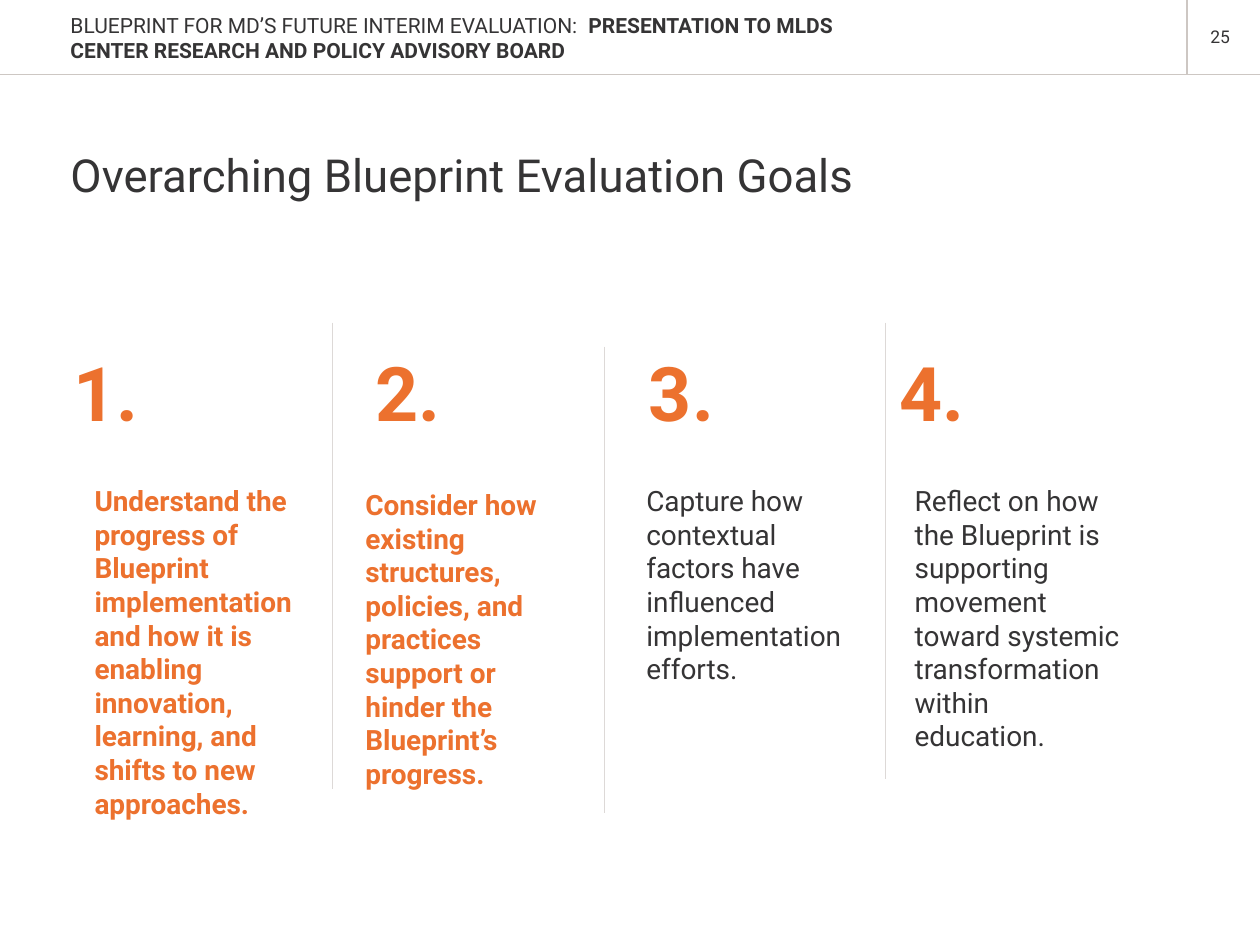
"""Build the slide on the overarching Blueprint evaluation goals."""
import dataclasses

import lxml.etree
import pptx
import pptx.dml.color
import pptx.enum.shapes
import pptx.enum.text
import pptx.oxml.ns
import pptx.util

Inches = pptx.util.Inches
DARK, ORANGE = "353435", "EC712E"
HEADER_RULE, GOAL_RULE = "CDC7C3", "DDD9D7"
HEADER_HEIGHT, PAGE_RULE_LEFT = 0.59, 9.42


@dataclasses.dataclass(frozen=True)
class Goal:
    """One numbered goal with the places of its number and wording."""
    number_left: float
    left: float
    width: float
    wording: str
    highlighted: bool = False
    top: float = 3.74


@dataclasses.dataclass(frozen=True)
class Rule:
    """A straight line between two points."""
    start: tuple[float, float]
    end: tuple[float, float]
    color: str


GOALS = [
    Goal(0.58, 0.75, 1.75,
         "Understand the progress of Blueprint implementation and how it is "
         "enabling innovation, learning, and shifts to new approaches.", True),
    Goal(2.98, 2.9, 1.72,
         "Consider how existing structures, policies, and practices support "
         "or hinder the Blueprint’s progress.", True, 3.77),
    Goal(5.15, 5.13, 1.68,
         "Capture how contextual factors have influenced implementation "
         "efforts."),
    Goal(7.14, 7.26, 1.74,
         "Reflect on how the Blueprint is supporting movement toward systemic "
         "transformation within education."),
]

RULES = [
    Rule((0, HEADER_HEIGHT), (10, HEADER_HEIGHT), HEADER_RULE),
    Rule((PAGE_RULE_LEFT, 0), (PAGE_RULE_LEFT, HEADER_HEIGHT), HEADER_RULE),
    Rule((2.64, 2.56), (2.64, 6.26), GOAL_RULE),
    Rule((4.8, 2.75), (4.8, 6.45), GOAL_RULE),
    Rule((7.03, 2.56), (7.03, 6.18), GOAL_RULE),
]


def rgb(value: str) -> pptx.dml.color.RGBColor:
    """Turn a hex string into a colour."""
    return pptx.dml.color.RGBColor.from_string(value)


def style_run(run, size: float, color: str, bold: bool) -> None:
    """Give a run its font."""
    run.font.name = "Roboto"
    run.font.size = pptx.util.Pt(size)
    run.font.bold = bold
    run.font.color.rgb = rgb(color)


def add_text(slide, box: tuple, wording: str, size: float, color: str = DARK,
             bold: bool = False, insets: tuple = (0, 0, 0, 0)):
    """Add a wrapped text box and return its text frame."""
    frame = slide.shapes.add_textbox(*map(Inches, box)).text_frame
    frame.word_wrap = True
    (frame.margin_left, frame.margin_top,
     frame.margin_right, frame.margin_bottom) = map(Inches, insets)
    frame.text = wording
    paragraph = frame.paragraphs[0]
    paragraph.line_spacing = pptx.util.Pt(round(size * 1.2, 1))
    style_run(paragraph.runs[0], size, color, bold)
    return frame


def add_rule(slide, rule: Rule) -> None:
    """Draw a thin line without a shadow."""
    line = slide.shapes.add_connector(
        pptx.enum.shapes.MSO_CONNECTOR.STRAIGHT,
        *map(Inches, rule.start + rule.end))
    line.line.color.rgb = rgb(rule.color)
    line.line.width = pptx.util.Pt(0.75)
    lxml.etree.SubElement(line._element.spPr,
                          pptx.oxml.ns.qn("a:effectLst"))


def add_header(slide) -> None:
    """Add the running title and the page number."""
    header = add_text(slide, (0.56, 0, 6.7, 0.6),
                      "BLUEPRINT FOR MD’S FUTURE INTERIM EVALUATION:  ", 12)
    header.vertical_anchor = pptx.enum.text.MSO_ANCHOR.MIDDLE
    audience = header.paragraphs[0].add_run()
    audience.text = ("PRESENTATION TO MLDS CENTER RESEARCH AND POLICY "
                     "ADVISORY BOARD")
    style_run(audience, 12, DARK, True)
    page = add_text(slide, (9.48, 0.16, 0.38, 0.27), "25", 10,
                    insets=(0.1, 0.05, 0.1, 0.05))
    page.paragraphs[0].alignment = pptx.enum.text.PP_ALIGN.RIGHT


def add_goal(slide, number: int, goal: Goal) -> None:
    """Add a goal's large number and its wording."""
    add_text(slide, (goal.number_left, 2.75, 1.42, 0.83), f"{number}.", 43,
             ORANGE, True)
    add_text(slide, (goal.left, goal.top, goal.width, 2.43), goal.wording, 16,
             ORANGE if goal.highlighted else DARK, goal.highlighted,
             (0, 0.1, 0.1, 0.1))


def main() -> None:
    """Build and save the slide."""
    deck = pptx.Presentation()
    deck.slide_width, deck.slide_height = Inches(10), Inches(7.5)
    slide = deck.slides.add_slide(deck.slide_layouts[6])
    add_header(slide)
    add_text(slide, (0.56, 1.17, 8, 1),
             "Overarching Blueprint Evaluation Goals", 26)
    for number, goal in enumerate(GOALS, 1):
        add_goal(slide, number, goal)
    for rule in RULES:
        add_rule(slide, rule)
    deck.save("out.pptx")


if __name__ == "__main__":
    main()
